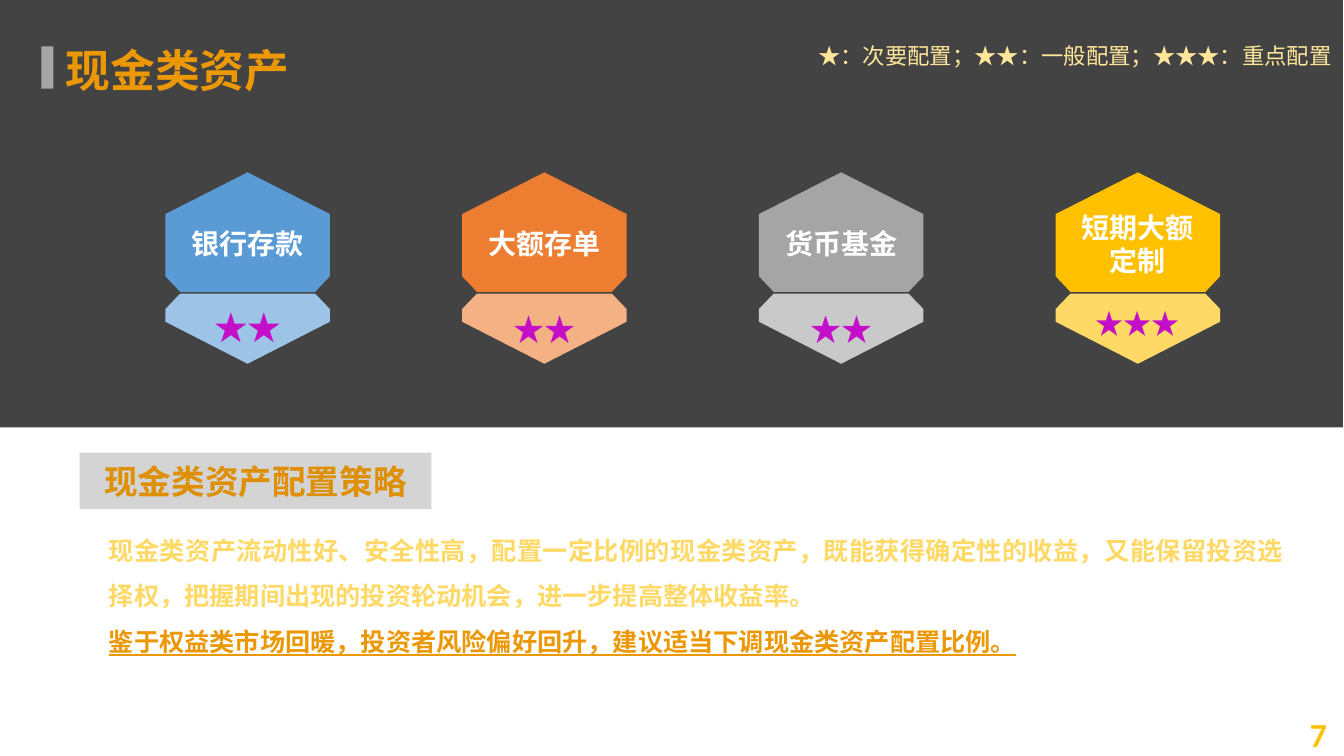
from dataclasses import dataclass

import pptx
import pptx.dml.color
import pptx.enum.shapes
import pptx.enum.text
import pptx.oxml
import pptx.oxml.ns
import pptx.util
from lxml import etree

RGBColor = pptx.dml.color.RGBColor
Align = pptx.enum.text.PP_ALIGN
Anchor = pptx.enum.text.MSO_ANCHOR

CHARCOAL = RGBColor(0x29, 0x29, 0x29)
GREY = RGBColor(0xA6, 0xA6, 0xA6)
ORANGE = RGBColor(0xEC, 0x97, 0x04)
DARK_ORANGE = RGBColor(0xDE, 0x8F, 0x04)
GOLD = RGBColor(0xFF, 0xC0, 0x00)
PALE_GOLD = RGBColor(0xFF, 0xD9, 0x66)
CREAM = RGBColor(0xFF, 0xE6, 0x99)
WHITE = RGBColor(0xFF, 0xFF, 0xFF)
MAGENTA = RGBColor(0xC4, 0x0E, 0xC8)
BLUE = RGBColor(0x5B, 0x9B, 0xD5)
PALE_BLUE = RGBColor(0x9D, 0xC3, 0xE6)
RUST = RGBColor(0xED, 0x7D, 0x31)
PALE_RUST = RGBColor(0xF4, 0xB1, 0x83)
SILVER = RGBColor(0xA5, 0xA5, 0xA5)
PALE_SILVER = RGBColor(0xC9, 0xC9, 0xC9)

CHINESE = "Noto Sans CJK SC"
LATIN = "Calibri"
WIDTH = pptx.util.Inches(13.333)
HEIGHT = pptx.util.Inches(7.5)

FIRST_COLUMN = 12.3
COLUMN_STEP = 22.08
CAP_OUTLINE = [(0.5, 0), (1, 0.35), (1, 0.87), (0.91, 1), (0.09, 1), (0, 0.87), (0, 0.35)]
BASE_OUTLINE = [(0.09, 0), (0.91, 0), (1, 0.22), (1, 0.4), (0.5, 1), (0, 0.4), (0, 0.22)]


def across(percent: float) -> int:
    return round(WIDTH * percent / 100)


def down(percent: float) -> int:
    return round(HEIGHT * percent / 100)


@dataclass
class Area:
    left: float
    top: float
    width: float
    height: float

    def lengths(self) -> tuple[int, int, int, int]:
        return across(self.left), down(self.top), across(self.width), down(self.height)


@dataclass
class Style:
    size: float
    color: RGBColor
    align: Align = Align.LEFT
    bold: bool = True
    underline: bool = False
    spacing: float = 1.0
    typeface: str = CHINESE


@dataclass
class Asset:
    lines: list[str]
    stars: str
    star_size: float
    star_spacing: float
    cap_color: RGBColor
    base_color: RGBColor


ASSETS = [
    Asset(["银行存款"], "★★", 24, 1.2, BLUE, PALE_BLUE),
    Asset(["大额存单"], "★★", 22.2, 1.3, RUST, PALE_RUST),
    Asset(["货币基金"], "★★", 22.2, 1.3, SILVER, PALE_SILVER),
    Asset(["短期大额", "定制"], "★★★", 20, 1.0, GOLD, PALE_GOLD),
]


def write(box, lines: list[tuple[str, Style]], anchor: Anchor = Anchor.TOP, wrap: bool = True) -> None:
    frame = box.text_frame
    frame.auto_size = pptx.enum.text.MSO_AUTO_SIZE.NONE
    frame.word_wrap = wrap
    frame.vertical_anchor = anchor
    frame.text = "\n".join(text for text, _ in lines)
    for para, (_, style) in zip(frame.paragraphs, lines):
        properties = para._p.get_or_add_pPr()
        properties.set("marL", "0")
        properties.set("indent", "0")
        etree.SubElement(properties, pptx.oxml.ns.qn("a:buNone"))
        para.alignment = style.align
        para.line_spacing = style.spacing
        para.space_before = pptx.util.Pt(0)
        font = para.font
        font.size = pptx.util.Pt(style.size)
        font.bold = style.bold
        font.underline = style.underline
        font.color.rgb = style.color
        font.name = style.typeface
        east_asian = etree.SubElement(font._element, pptx.oxml.ns.qn("a:ea"))
        east_asian.set("typeface", style.typeface)


def paint(shape, color: RGBColor, opacity: int = 100) -> None:
    shape.shadow.inherit = False
    shape.line.fill.background()
    shape.fill.solid()
    shape.fill.fore_color.rgb = color
    if opacity < 100:
        solid = shape._element.spPr.find(pptx.oxml.ns.qn("a:solidFill"))
        alpha = etree.SubElement(solid[0], pptx.oxml.ns.qn("a:alpha"))
        alpha.set("val", str(opacity * 1000))


def add_panel(page, area: Area, color: RGBColor, opacity: int = 100):
    panel = page.shapes.add_shape(pptx.enum.shapes.MSO_SHAPE.RECTANGLE, *area.lengths())
    paint(panel, color, opacity)
    return panel


def add_label(page, area: Area, text: str, style: Style,
              anchor: Anchor = Anchor.TOP, wrap: bool = True) -> None:
    box = page.shapes.add_textbox(*area.lengths())
    write(box, [(text, style)], anchor, wrap)


def add_badge_part(page, area: Area, outline: list[tuple[float, float]], color: RGBColor,
                   lines: list[tuple[str, Style]], top_inset: float, bottom_inset: float) -> None:
    points = [(across(area.left + x * area.width), down(area.top + y * area.height))
              for x, y in outline]
    builder = page.shapes.build_freeform(*points[0])
    builder.add_line_segments(points[1:], close=True)
    part = builder.convert_to_shape()
    paint(part, color)
    write(part, lines, Anchor.MIDDLE)
    frame = part.text_frame
    frame.margin_left = frame.margin_right = across(0.75)
    frame.margin_top = down(top_inset)
    frame.margin_bottom = down(bottom_inset)


def add_badge(page, column: int, asset: Asset) -> None:
    left = FIRST_COLUMN + column * COLUMN_STEP
    name_style = Style(20, WHITE, Align.CENTER)
    star_style = Style(asset.star_size, MAGENTA, Align.CENTER, spacing=asset.star_spacing)
    add_badge_part(page, Area(left, 22.8, 12.25, 15.8), CAP_OUTLINE, asset.cap_color,
                   [(line, name_style) for line in asset.lines], 3.73, 0.67)
    add_badge_part(page, Area(left, 38.85, 12.25, 9.27), BASE_OUTLINE, asset.base_color,
                   [(asset.stars, star_style)], 0.67, 2.13)


def fill_placeholder(holder, area: Area, lines: list[tuple[str, Style]]) -> None:
    holder.left, holder.top, holder.width, holder.height = area.lengths()
    write(holder, lines)


def main() -> None:
    deck = pptx.Presentation()
    deck.slide_width = WIDTH
    deck.slide_height = HEIGHT
    page = deck.slides.add_slide(deck.slide_layouts[1])

    band = add_panel(page, Area(-0.08, 0, 100, 56.53), CHARCOAL, 88)
    page.shapes._spTree.insert(2, band._element)

    fill_placeholder(page.shapes.title, Area(4.12, 4.93, 18.53, 8.53),
                     [("现金类资产", Style(32, ORANGE))])
    fill_placeholder(page.placeholders[1], Area(7.35, 68.13, 88.95, 19.47), [
        ("现金类资产流动性好、安全性高，配置一定比例的现金类资产，既能获得确定性的收益，"
         "又能保留投资选择权，把握期间出现的投资轮动机会，进一步提高整体收益率。",
         Style(18, PALE_GOLD, Align.JUSTIFY, spacing=1.5)),
        ("鉴于权益类市场回暖，投资者风险偏好回升，建议适当下调现金类资产配置比例。",
         Style(18, ORANGE, Align.JUSTIFY, underline=True, spacing=1.5)),
    ])

    add_panel(page, Area(5.92, 59.87, 26.18, 7.47), GREY, 48)
    add_label(page, Area(5.92, 60.27, 26.18, 6.67), "现金类资产配置策略",
              Style(24, DARK_ORANGE, Align.CENTER))
    add_panel(page, Area(3.08, 6.13, 0.9, 5.6), GREY)
    add_label(page, Area(60.15, 4.93, 39.83, 4.93), "★：次要配置；★★：一般配置；★★★：重点配置",
              Style(16, CREAM, bold=False), wrap=False)
    add_label(page, Area(95.33, 94.4, 4.13, 5.33), "7",
              Style(24, GOLD, Align.RIGHT, typeface=LATIN), Anchor.MIDDLE)

    for column, asset in enumerate(ASSETS):
        add_badge(page, column, asset)

    deck.save("out.pptx")


if __name__ == "__main__":
    main()
